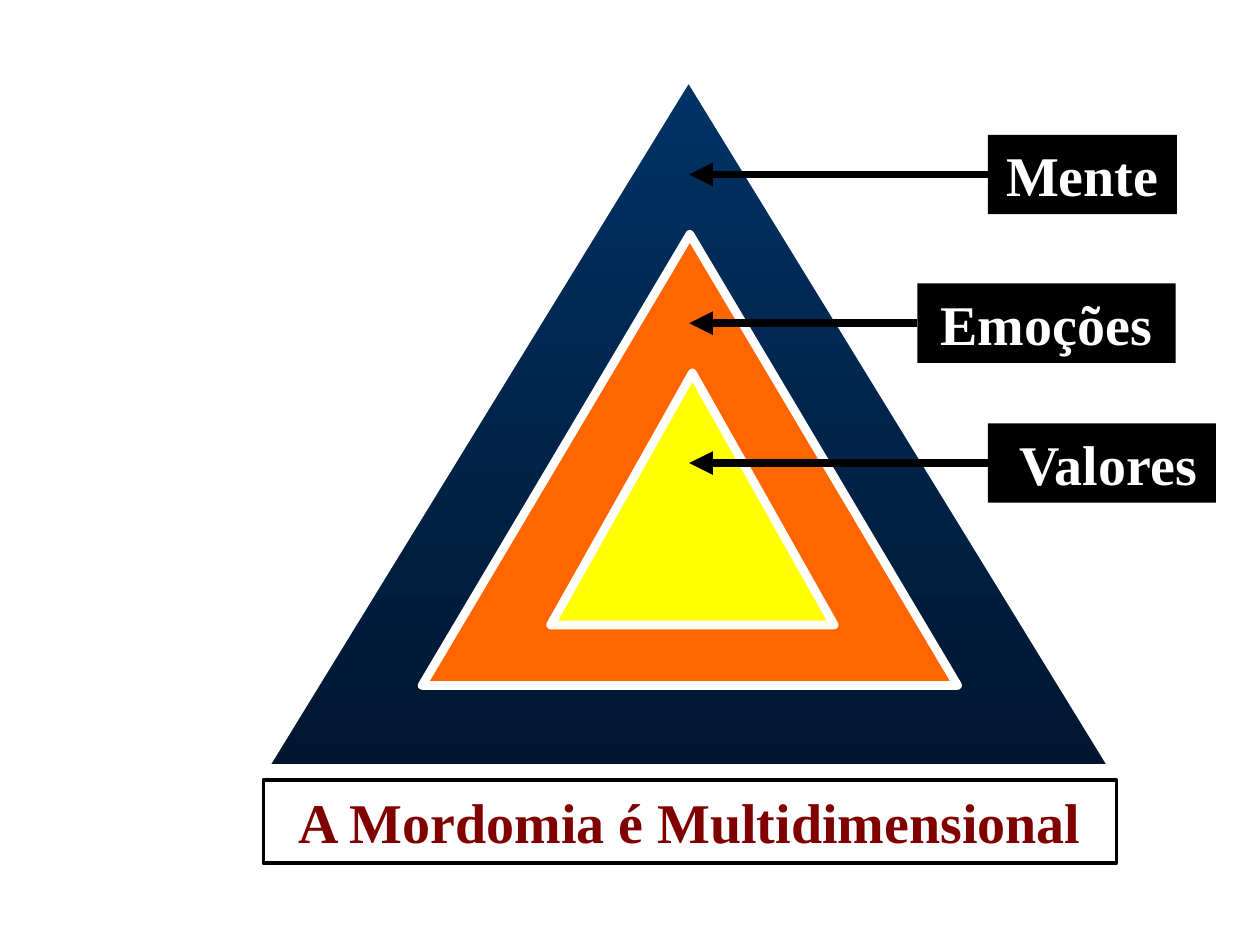
from lxml.etree import SubElement
from pptx import Presentation
from pptx.dml.color import RGBColor
from pptx.enum.shapes import MSO_CONNECTOR, MSO_SHAPE
from pptx.enum.text import MSO_ANCHOR, MSO_AUTO_SIZE, PP_ALIGN
from pptx.oxml.ns import qn
from pptx.util import Inches, Pt

COLORS = {
    "navy": "003366",
    "midnight": "00162F",
    "orange": "FF6600",
    "yellow": "FFFF00",
    "white": "FFFFFF",
    "black": "000000",
    "maroon": "800000",
}
FONT = {"name": "Times New Roman", "size": Pt(32), "bold": True}
FRAME = {
    "word_wrap": True,
    "auto_size": MSO_AUTO_SIZE.NONE,
    "vertical_anchor": MSO_ANCHOR.MIDDLE,
    "margin_left": Inches(0.1),
    "margin_right": Inches(0.1),
    "margin_top": Inches(0.05),
    "margin_bottom": Inches(0.05),
}

# Boxes are left, top, width, height in inches
TITLE_BOX = (2.09, 6.19, 6.77, 0.66)
TRIANGLES = [
    ((2.09, 0.6, 6.75, 5.5), ("navy", "midnight")),
    ((3.35, 1.86, 4.25, 3.58), ("orange",)),
    ((4.37, 2.96, 2.25, 2), ("yellow",)),
]
LABEL_HEIGHT = 0.63
ARROW_TIP = 5.47
# Text, left, top, width, left margin
LABELS = [
    ("Mente", 7.84, 1.07, 1.5, 0.1),
    ("Emoções", 7.28, 2.25, 2.05, 0.1),
    ("Valores", 7.84, 3.36, 1.81, 0.2),
]


def color(name):
    return RGBColor.from_string(COLORS[name])


def set_attributes(target, values):
    for name, value in values.items():
        setattr(target, name, value)


def set_line(shape, name, width):
    shape.line.color.rgb = color(name)
    shape.line.width = Pt(width)


def set_text(shape, text, color_name, **frame_values):
    frame = shape.text_frame
    frame.text = text
    set_attributes(frame, {**FRAME, **frame_values})
    paragraph = frame.paragraphs[0]
    set_attributes(paragraph, {"alignment": PP_ALIGN.CENTER, "space_before": Pt(0)})
    set_attributes(paragraph.font, FONT)
    paragraph.font.color.rgb = color(color_name)


def add_title(slide, box):
    title = slide.shapes.title
    names = ("left", "top", "width", "height")
    set_attributes(title, dict(zip(names, map(Inches, box))))
    set_line(title, "black", 2)
    set_text(title, "A Mordomia é Multidimensional", "maroon")


def add_triangle(slide, box, fill_names):
    triangle = slide.shapes.add_shape(
        MSO_SHAPE.FLOWCHART_EXTRACT, *map(Inches, box))
    triangle.shadow.inherit = False
    if len(fill_names) > 1:
        triangle.fill.gradient()
        triangle.fill.gradient_angle = 270
        for stop, name in zip(triangle.fill.gradient_stops, fill_names):
            stop.color.rgb = color(name)
    else:
        triangle.fill.solid()
        triangle.fill.fore_color.rgb = color(fill_names[0])
    set_line(triangle, "white", 5)


def add_label(slide, text, box, margin_left):
    label = slide.shapes.add_shape(MSO_SHAPE.RECTANGLE, *map(Inches, box))
    label.shadow.inherit = False
    label.fill.solid()
    label.fill.fore_color.rgb = color("black")
    label.line.fill.background()
    set_text(label, text, "white", margin_left=Inches(margin_left))
    return label


def add_arrow(slide, label, tip):
    middle = label.top + label.height // 2
    arrow = slide.shapes.add_connector(
        MSO_CONNECTOR.STRAIGHT, label.left, middle, Inches(tip), middle)
    arrow.begin_connect(label, 1)
    set_line(arrow, "black", 4.5)
    SubElement(arrow.line._get_or_add_ln(), qn("a:tailEnd"), type="triangle")
    SubElement(arrow._element.spPr, qn("a:effectLst"))


def main():
    presentation = Presentation()
    presentation.slide_width = Inches(10)
    presentation.slide_height = Inches(7.5)
    slide = presentation.slides.add_slide(presentation.slide_layouts[5])

    # Nested triangles, outermost first
    for box, fill_names in TRIANGLES:
        add_triangle(slide, box, fill_names)

    add_title(slide, TITLE_BOX)

    # Labels, each with an arrow into its layer
    for text, left, top, width, margin_left in LABELS:
        label = add_label(slide, text, (left, top, width, LABEL_HEIGHT), margin_left)
        add_arrow(slide, label, ARROW_TIP)

    presentation.save("out.pptx")


if __name__ == "__main__":
    main()
